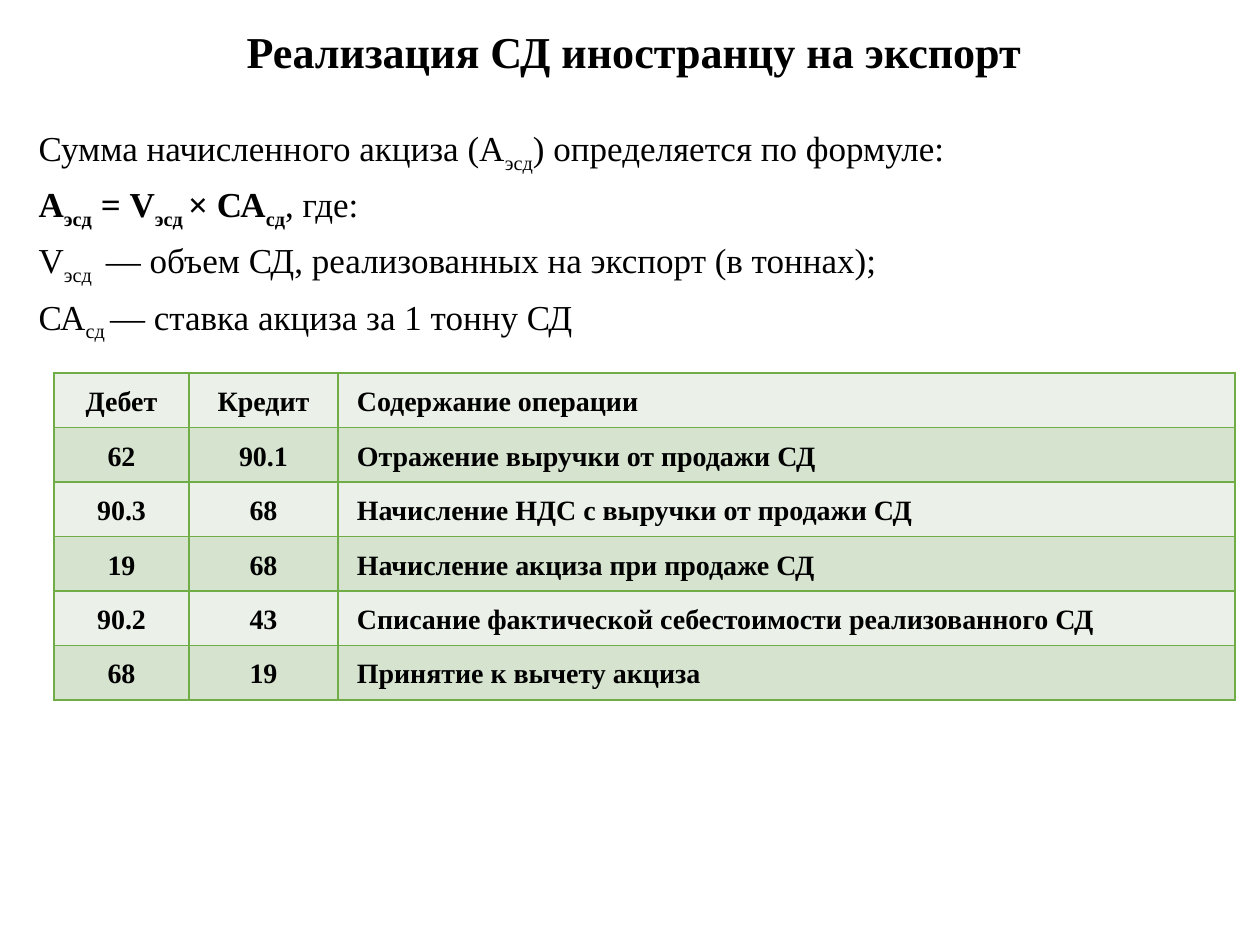
import lxml.etree
import pptx
import pptx.dml.color
import pptx.enum.text
import pptx.oxml.ns
import pptx.util

PX = 914400 / 126
FONT = "Times New Roman"
BLACK = pptx.dml.color.RGBColor(0x00, 0x00, 0x00)
GREEN = pptx.dml.color.RGBColor(0x70, 0xAD, 0x47)
ROW_FILLS = (
    pptx.dml.color.RGBColor(0xEB, 0xF1, 0xE9),
    pptx.dml.color.RGBColor(0xD5, 0xE3, 0xCF),
)
ALIGN = pptx.enum.text.PP_ALIGN
ANCHOR = pptx.enum.text.MSO_ANCHOR

TITLE = "Реализация СД иностранцу на экспорт"
FORMULA_LINES = [
    [("Сумма начисленного акциза (А|эсд|) определяется по формуле:", False)],
    [("А|эсд| = V|эсд |× СА|сд", True), (", где: ", False)],
    [("V|эсд | — объем СД, реализованных на экспорт (в тоннах);", False)],
    [("СА|сд |— ставка акциза за 1 тонну СД", False)],
]
ENTRIES = [
    ("Дебет", "Кредит", "Содержание операции"),
    ("62", "90.1", "Отражение выручки от продажи СД"),
    ("90.3", "68", "Начисление НДС с выручки от продажи СД"),
    ("19", "68", "Начисление акциза при продаже СД"),
    ("90.2", "43", "Списание фактической себестоимости реализованного СД"),
    ("68", "19", "Принятие к вычету акциза"),
]


def px(length):
    """Turn pixels into EMU."""
    return pptx.util.Emu(round(length * PX))


def add_element(parent, tag, **attributes):
    """Append a DrawingML element to a parent element."""
    return lxml.etree.SubElement(parent, pptx.oxml.ns.qn(tag), attributes)


def write_text(paragraph, text, *, size, bold=False, align=ALIGN.JUSTIFY, spacing=0.9, before=0):
    """Add text to a paragraph, with every second part between bars as subscript."""
    paragraph.alignment = align
    paragraph.line_spacing = spacing
    paragraph.space_before = pptx.util.Pt(before)
    for index, part in enumerate(text.split("|")):
        run = paragraph.add_run()
        run.text = part
        run.font.name = FONT
        run.font.size = pptx.util.Pt(size)
        run.font.bold = bold
        run.font.color.rgb = BLACK
        if index % 2:
            run.font._element.set("baseline", "-25000")


def place(shape, box, anchor):
    """Move a placeholder to a box and fix its text settings."""
    shape.left, shape.top, shape.width, shape.height = map(px, box)
    frame = shape.text_frame
    frame.word_wrap = True
    frame.auto_size = pptx.enum.text.MSO_AUTO_SIZE.NONE
    frame.vertical_anchor = anchor
    return frame


def fill_title(slide, box):
    """Write the slide title."""
    frame = place(slide.shapes.title, box, ANCHOR.MIDDLE)
    write_text(frame.paragraphs[0], TITLE, size=25.2, bold=True, align=ALIGN.CENTER)


def fill_formula(slide, box):
    """Write the excise formula and its legend."""
    frame = place(slide.placeholders[1], box, ANCHOR.TOP)
    for index, line in enumerate(FORMULA_LINES):
        paragraph = frame.add_paragraph() if index else frame.paragraphs[0]
        properties = paragraph._p.get_or_add_pPr()
        properties.set("marL", "0")
        properties.set("indent", "0")
        add_element(properties, "a:buNone")
        for text, bold in line:
            write_text(paragraph, text, size=20, bold=bold, before=7.5 if index else 0)


def format_cell(cell, fill):
    """Give a cell its borders, fill and margins."""
    properties = cell._tc.get_or_add_tcPr()
    for side in ("a:lnL", "a:lnR", "a:lnT", "a:lnB"):
        line = add_element(properties, side, w=str(pptx.util.Pt(1)))
        add_element(add_element(line, "a:solidFill"), "a:srgbClr", val=str(GREEN))
    cell.fill.solid()
    cell.fill.fore_color.rgb = fill
    cell.margin_left = cell.margin_right = px(19)
    cell.margin_top = cell.margin_bottom = px(9)


def add_entries(slide, box):
    """Add the table of accounting entries."""
    left, top, width, height = box
    table = slide.shapes.add_table(len(ENTRIES), 3, *map(px, box)).table
    for column, column_width in zip(table.columns, (135, 149, width - 135 - 149)):
        column.width = px(column_width)
    for row_index, entry in enumerate(ENTRIES):
        table.rows[row_index].height = px(height / len(ENTRIES))
        for column_index, text in enumerate(entry):
            cell = table.cell(row_index, column_index)
            format_cell(cell, ROW_FILLS[row_index % 2])
            align = ALIGN.JUSTIFY if column_index == 2 else ALIGN.CENTER
            write_text(cell.text_frame.paragraphs[0], text, size=16, bold=True, align=align, spacing=1.15)


def main():
    """Build and save the presentation."""
    presentation = pptx.Presentation()
    presentation.slide_width, presentation.slide_height = px(1260), px(945)
    slide = presentation.slides.add_slide(presentation.slide_layouts[1])
    fill_title(slide, (91, 26, 1086, 56))
    fill_formula(slide, (26, 121, 1211, 218))
    add_entries(slide, (54, 373, 1181, 327))
    presentation.save("out.pptx")


if __name__ == "__main__":
    main()
